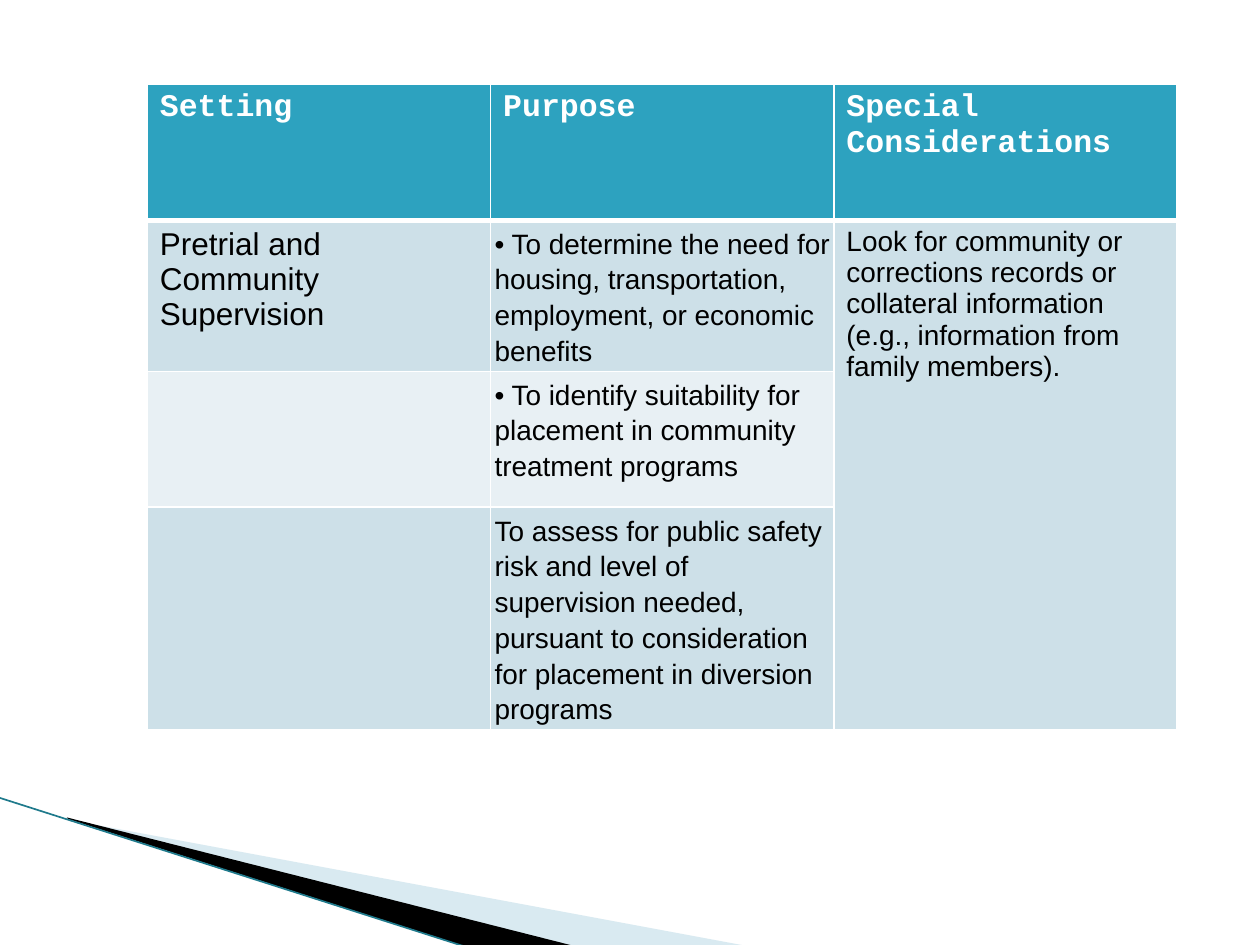
from lxml import etree
from pptx import Presentation
from pptx.dml.color import RGBColor
from pptx.enum.shapes import MSO_CONNECTOR
from pptx.oxml.ns import qn
from pptx.util import Cm, Pt

STRAIGHT = MSO_CONNECTOR.STRAIGHT
BLANK_LAYOUT = 6
WHITE, BLACK = "FFFFFF", "000000"
HEADER, BAND_DARK, BAND_LIGHT = "2DA2BF", "CDE0E8", "E8F0F4"
PALE_BLUE, TEAL = "A0CBDC", "1F7A8C"

COLUMN_WIDTH = 6.92
ROW_HEIGHTS = [2.74, 1.9, 2.74, 2.74]
ROW_FILLS = [HEADER, BAND_DARK, BAND_LIGHT, BAND_DARK]
HEADINGS = ["Setting", "Purpose", "Special Considerations"]
SETTING = "Pretrial and Community Supervision"
PURPOSES = [
    "• To determine the need for housing, transportation, employment, "
    "or economic benefits",
    "• To identify suitability for placement in community treatment programs",
    "To assess for public safety risk and level of supervision needed, "
    "pursuant to consideration for placement in diversion programs",
]
CONSIDERATIONS = (
    "Look for community or corrections records or collateral information "
    "(e.g., information from family members)."
)


def rgb(value):
    return RGBColor.from_string(value)


def write(tf, text, size=18, font="Arial", color=BLACK, bold=False,
          line_spacing=None, space_after=None):
    p = tf.paragraphs[0]
    p.line_spacing = line_spacing
    p.space_after = space_after
    r = p.add_run()
    r.text = text
    r.font.size = Pt(size)
    r.font.name = font
    r.font.bold = bold
    r.font.color.rgb = rgb(color)


def style_cell(cell, fill, top, bottom):
    tc_pr = cell._tc.get_or_add_tcPr()
    for side, width in (("L", 1), ("R", 1), ("T", top), ("B", bottom)):
        ln = etree.SubElement(tc_pr, qn(f"a:ln{side}"), w=str(Pt(width)))
        solid = etree.SubElement(ln, qn("a:solidFill"))
        etree.SubElement(solid, qn("a:srgbClr"), val=WHITE)
    cell.fill.solid()
    cell.fill.fore_color.rgb = rgb(fill)


def add_wedge(s, points, color, opacity=100):
    points = [(Cm(x), Cm(y)) for x, y in points]
    builder = s.shapes.build_freeform(*points[0], scale=1.0)
    builder.add_line_segments(points[1:], close=True)
    sp = builder.convert_to_shape()
    sp.shadow.inherit = False
    sp.line.fill.background()
    sp.fill.solid()
    sp.fill.fore_color.rgb = rgb(color)
    if opacity < 100:
        clr = sp._element.spPr.find(f".//{qn('a:srgbClr')}")
        etree.SubElement(clr, qn("a:alpha"), val=str(opacity * 1000))


def add_line(s, start, end, color, width):
    line = s.shapes.add_connector(
        STRAIGHT, *(Cm(v) for v in (*start, *end)))
    line.line.color.rgb = rgb(color)
    line.line.width = Pt(width)
    etree.SubElement(line._element.spPr, qn("a:effectLst"))


def add_settings_table(s):
    rows, cols = len(ROW_HEIGHTS), len(HEADINGS)
    table = s.shapes.add_table(
        rows, cols, Cm(2.97), Cm(1.7),
        Cm(COLUMN_WIDTH * cols), Cm(sum(ROW_HEIGHTS))).table
    for column in table.columns:
        column.width = Cm(COLUMN_WIDTH)
    for i, (height, fill) in enumerate(zip(ROW_HEIGHTS, ROW_FILLS)):
        table.rows[i].height = Cm(height)
        for j in range(cols):
            cell_fill = BAND_DARK if i and j == cols - 1 else fill
            style_cell(table.cell(i, j), cell_fill,
                       top=3 if i == 1 else 1, bottom=3 if i == 0 else 1)

    for j, heading in enumerate(HEADINGS):
        write(table.cell(0, j).text_frame, heading,
              font="Courier New", color=WHITE, bold=True)
    write(table.cell(1, 0).text_frame, SETTING)
    for i, purpose in enumerate(PURPOSES, 1):
        cell = table.cell(i, 1)
        cell.margin_left = cell.margin_right = Cm(0.08)
        cell.margin_top = cell.margin_bottom = Cm(0.08)
        write(cell.text_frame, purpose, size=16,
              line_spacing=1.15, space_after=Pt(10))
    table.cell(1, 2).merge(table.cell(rows - 1, 2))
    write(table.cell(1, 2).text_frame, CONSIDERATIONS, size=16)


def main():
    prs = Presentation()
    prs.slide_width, prs.slide_height = Cm(25.4), Cm(19.05)
    s = prs.slides.add_slide(prs.slide_layouts[BLANK_LAYOUT])
    add_wedge(s, [(1.4, 16.53), (15.11, 19.08), (11.58, 19.08), (1.4, 16.51)],
              PALE_BLUE, opacity=40)
    add_wedge(s, [(1.35, 16.48), (11.61, 19.08), (9.45, 19.1), (1.37, 16.51)],
              BLACK)
    add_line(s, (-0.02, 16.08), (9.43, 19.1), TEAL, 0.95)
    add_settings_table(s)
    prs.save("out.pptx")


if __name__ == "__main__":
    main()
